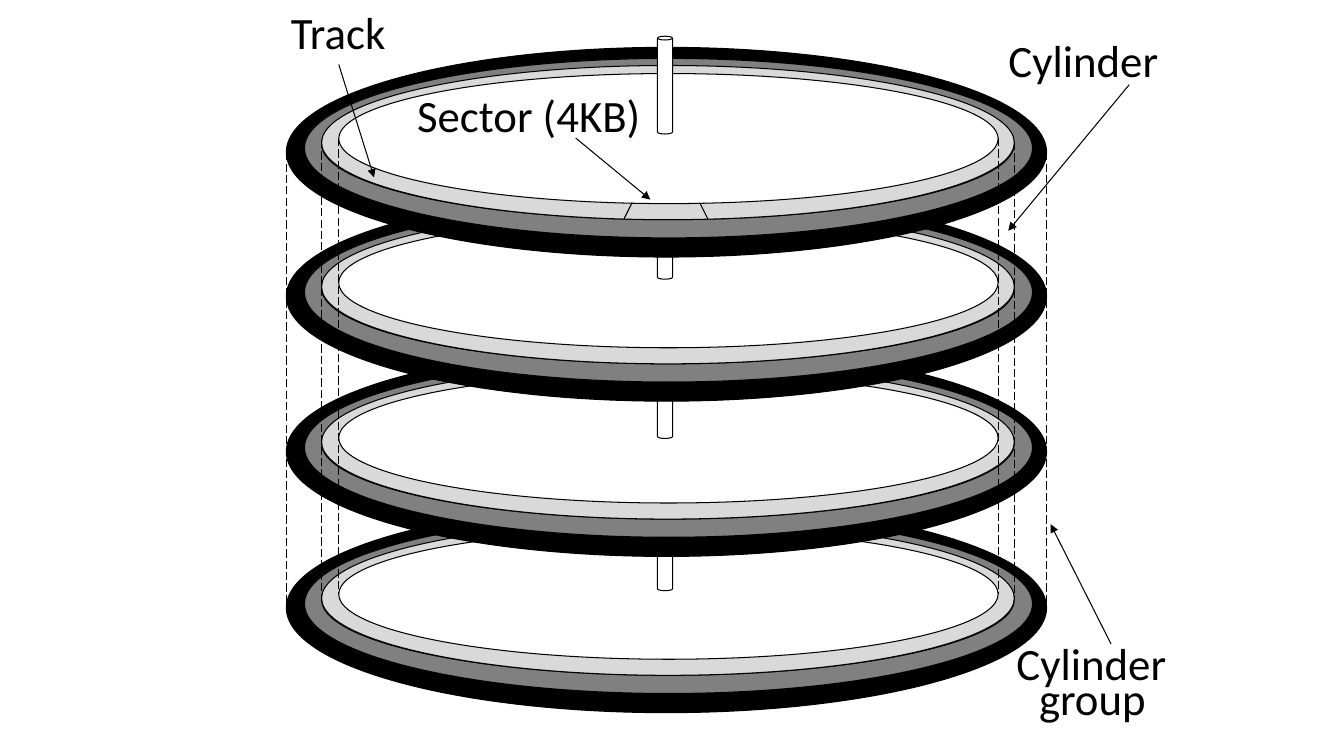
import dataclasses
import typing

import pptx
import pptx.dml.color
import pptx.enum.dml
import pptx.enum.shapes
import pptx.enum.text
import pptx.oxml
import pptx.oxml.ns
import pptx.util

RGBColor = pptx.dml.color.RGBColor
BLACK = RGBColor(0x00, 0x00, 0x00)
GRAY = RGBColor(0x80, 0x80, 0x80)
SILVER = RGBColor(0xD9, 0xD9, 0xD9)
WHITE = RGBColor(0xFF, 0xFF, 0xFF)

PAGE_WIDTH = pptx.util.Inches(13.33)
PAGE_HEIGHT = pptx.util.Inches(7.5)
COLUMNS = 133.3
ROWS = 75
LINE_WIDTH = pptx.util.Pt(0.75)
SHAPE = pptx.enum.shapes.MSO_SHAPE


@dataclasses.dataclass(frozen=True)
class Area:
    column: float
    row: float
    columns: float
    rows: float

    def lowered(self, rows: float) -> "Area":
        return dataclasses.replace(self, row=self.row + rows)


@dataclasses.dataclass(frozen=True)
class Segment:
    start_column: float
    start_row: float
    end_column: float
    end_row: float


@dataclasses.dataclass(frozen=True)
class Ring:
    outer: Area
    hole: Area
    color: RGBColor


@dataclasses.dataclass(frozen=True)
class Platter:
    row: float
    spindle: Area


@dataclasses.dataclass(frozen=True)
class Label:
    text: str
    area: Area


@dataclasses.dataclass(frozen=True)
class Callout:
    arrow: Segment
    labels: tuple[Label, ...]
    marks: tuple[Segment, ...] = ()


RINGS = (
    Ring(Area(28.4, 0, 75.4, 20.8), Area(30.2, 1.1, 71.8, 17.5), BLACK),
    Ring(Area(30.2, 1.1, 72.2, 17.8), Area(31.9, 2.1, 68.7, 15), GRAY),
    Ring(Area(31.9, 1.8, 68.7, 15.3), Area(33.6, 2.6, 65.4, 12.9), SILVER),
)

PLATTERS = (
    Platter(49.9, Area(65.2, 52.4, 1.5, 6.2)),
    Platter(34.4, Area(65.2, 37.3, 1.5, 6.2)),
    Platter(19, Area(65.2, 21.5, 1.5, 6.2)),
    Platter(4.7, Area(65.2, 3.6, 1.5, 9.7)),
)

CYLINDER_EDGES = (
    Segment(100.6, 14.1, 100.6, 59.3),
    Segment(31.9, 13.9, 31.9, 59.7),
    Segment(28.4, 15.1, 28.4, 60.4),
    Segment(103.8, 15.1, 103.8, 60.4),
    Segment(99, 13.7, 99, 58.9),
    Segment(33.6, 13.7, 33.6, 58.9),
)

CALLOUTS = (
    Callout(Segment(112, 8.4, 100, 22.9), (Label("Cylinder", Area(97.7, 2.8, 19.5, 6.4)),)),
    Callout(
        Segment(110.2, 63.9, 104.2, 52),
        (Label("Cylinder", Area(98.5, 62.6, 19.5, 6.4)), Label("group", Area(98.6, 66, 19.5, 6.4))),
    ),
    Callout(Segment(33.6, 6.4, 37.1, 17.6), (Label("Track", Area(23.8, 0, 19.5, 6.4)),)),
    Callout(
        Segment(57.1, 13.7, 64.5, 19.8),
        (Label("Sector (4KB)", Area(39.2, 8.2, 26.5, 6.4)),),
        (Segment(62.7, 20.1, 61.9, 21.7), Segment(70.2, 21.7, 69.4, 20.1)),
    ),
)


def across(columns: float) -> int:
    return round(PAGE_WIDTH * columns / COLUMNS)


def down(rows: float) -> int:
    return round(PAGE_HEIGHT * rows / ROWS)


def placed(area: Area) -> tuple[int, int, int, int]:
    return across(area.column), down(area.row), across(area.columns), down(area.rows)


def draw_shape(shapes: typing.Any, kind: SHAPE, area: Area, color: RGBColor) -> None:
    shape = shapes.add_shape(kind, *placed(area))
    shape.shadow.inherit = False
    shape.fill.solid()
    shape.fill.fore_color.rgb = color
    shape.line.color.rgb = BLACK
    shape.line.width = LINE_WIDTH


def draw_line(shapes: typing.Any, segment: Segment, dashed: bool = False, arrow: bool = False) -> None:
    connector = shapes.add_connector(
        pptx.enum.shapes.MSO_CONNECTOR.STRAIGHT,
        across(segment.start_column),
        down(segment.start_row),
        across(segment.end_column),
        down(segment.end_row),
    )
    connector.line.color.rgb = BLACK
    connector.line.width = LINE_WIDTH
    if dashed:
        connector.line.dash_style = pptx.enum.dml.MSO_LINE.LONG_DASH
    properties = connector._element.spPr
    if arrow:
        head = pptx.oxml.parse_xml(f'<a:tailEnd {pptx.oxml.ns.nsdecls("a")} type="triangle"/>')
        properties.find(pptx.oxml.ns.qn("a:ln")).append(head)
    properties.append(pptx.oxml.parse_xml(f'<a:effectLst {pptx.oxml.ns.nsdecls("a")}/>'))


def draw_label(shapes: typing.Any, label: Label) -> None:
    box = shapes.add_textbox(*placed(label.area))
    frame = box.text_frame
    frame.word_wrap = True
    frame.auto_size = pptx.enum.text.MSO_AUTO_SIZE.SHAPE_TO_FIT_TEXT
    para = frame.paragraphs[0]
    para.alignment = pptx.enum.text.PP_ALIGN.CENTER
    span = para.add_run()
    span.text = label.text
    span.font.name = "Calibri"
    span.font.size = pptx.util.Pt(32)
    span.font.color.rgb = BLACK


def draw_platter(shapes: typing.Any, platter: Platter) -> None:
    for ring in RINGS:
        group = shapes.add_group_shape()
        draw_shape(group.shapes, SHAPE.OVAL, ring.outer.lowered(platter.row), ring.color)
        draw_shape(group.shapes, SHAPE.OVAL, ring.hole.lowered(platter.row), WHITE)
    draw_shape(shapes, SHAPE.CAN, platter.spindle, WHITE)


def draw_callout(shapes: typing.Any, callout: Callout) -> None:
    group = shapes.add_group_shape()
    for mark in callout.marks:
        draw_line(group.shapes, mark)
    draw_line(group.shapes, callout.arrow, arrow=True)
    for label in callout.labels:
        draw_label(group.shapes, label)


def main() -> None:
    deck = pptx.Presentation()
    deck.slide_width = PAGE_WIDTH
    deck.slide_height = PAGE_HEIGHT
    page = deck.slides.add_slide(deck.slide_layouts.get_by_name("Blank"))
    for platter in PLATTERS:
        draw_platter(page.shapes, platter)
    for edge in CYLINDER_EDGES:
        draw_line(page.shapes, edge, dashed=True)
    for callout in CALLOUTS:
        draw_callout(page.shapes, callout)
    deck.save("out.pptx")


if __name__ == "__main__":
    main()
